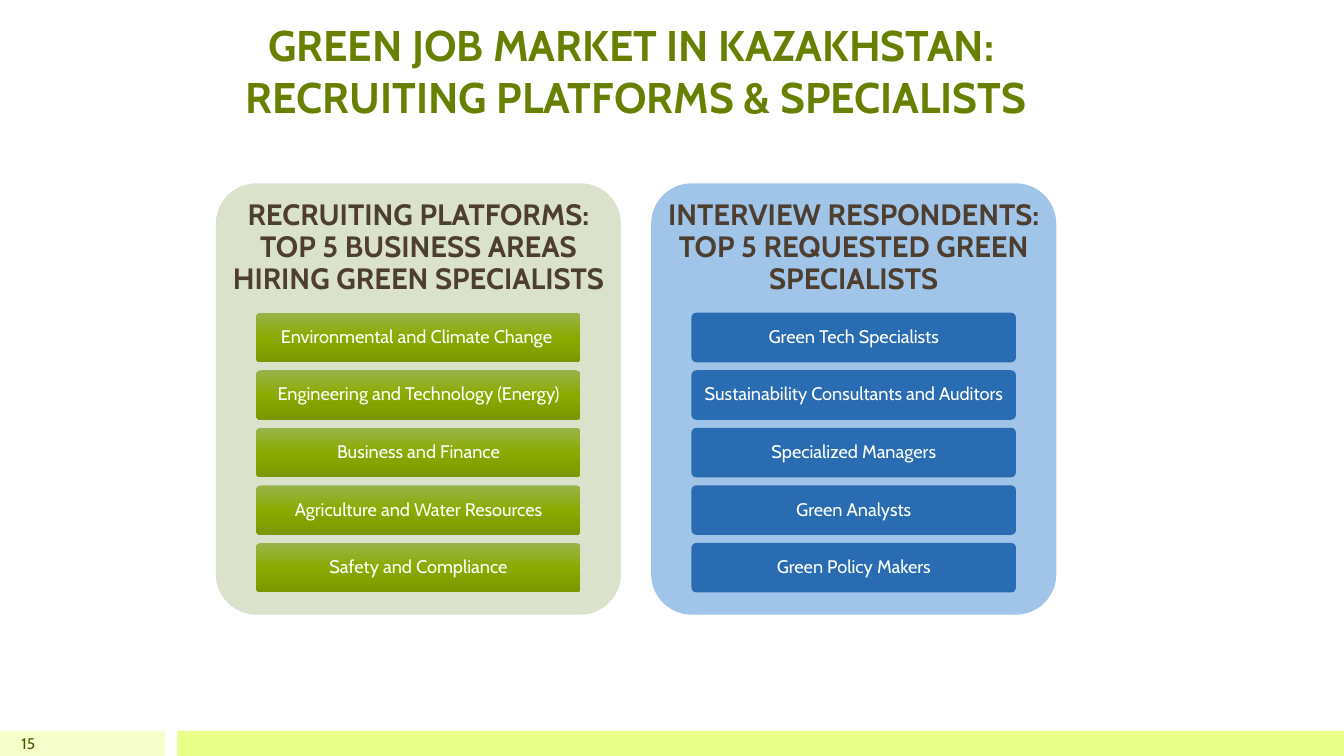
from copy import deepcopy
from dataclasses import dataclass

from pptx import Presentation
from pptx.dml.color import RGBColor
from pptx.enum.shapes import MSO_SHAPE
from pptx.enum.text import MSO_ANCHOR, PP_ALIGN
from pptx.util import Cm, Pt


@dataclass(frozen=True)
class Theme:
    font: str = "Cabin"
    title_size: float = 30.6
    heading_size: float = 21
    tile_size: float = 13
    number_size: float = 11
    title: str = "688000"
    heading: str = "4D3E2F"
    tile_text: str = "FFFFFF"
    number: str = "455500"
    footer_light: str = "F6FFCC"
    footer: str = "E9FF88"
    green_panel: str = "DAE2CC"
    green_tile: tuple = ("98B44B", "8BAA00", "7C9700")
    blue_panel: str = "A1C4E9"
    blue_tile: tuple = ("2A6CB2",)


class SlideBuilder:
    def __init__(self, slide, theme):
        self.slide = slide
        self.theme = theme

    def set_text(self, shape, text, size, color, bold=False, align=PP_ALIGN.CENTER,
                 anchor=MSO_ANCHOR.MIDDLE, spacing=1.0, insets=(0.25, 0.13)):
        """Put one formatted paragraph into a shape; insets are in cm."""
        frame = shape.text_frame
        frame.text = text
        paragraph = frame.paragraphs[0]
        side, end = (Cm(inset) for inset in insets)
        formats = (
            (frame, {"word_wrap": True, "vertical_anchor": anchor,
                     "margin_left": side, "margin_right": side,
                     "margin_top": end, "margin_bottom": end}),
            (paragraph, {"alignment": align, "line_spacing": spacing}),
        )
        fonts = tuple((run.font, {"name": self.theme.font, "size": Pt(size), "bold": bold})
                      for run in paragraph.runs)
        for target, values in formats + fonts:
            for name, value in values.items():
                setattr(target, name, value)
        for run in paragraph.runs:
            run.font.color.rgb = RGBColor.from_string(color)

    def title(self, text, left, top, width, height):
        shape = self.slide.shapes.title
        box = {"left": left, "top": top, "width": width, "height": height}
        for name, value in box.items():
            setattr(shape, name, Cm(value))
        self.set_text(shape, text, self.theme.title_size, self.theme.title,
                      bold=True, anchor=MSO_ANCHOR.BOTTOM)

    def text(self, text, left, top, width, height, size, color, **options):
        shape = self.slide.shapes.add_textbox(Cm(left), Cm(top), Cm(width), Cm(height))
        self.set_text(shape, text, size, color, **options)

    def block(self, left, top, width, height, colors, rounding=None):
        """Add a rectangle; several colours make a vertical gradient."""
        kind = MSO_SHAPE.RECTANGLE if rounding is None else MSO_SHAPE.ROUNDED_RECTANGLE
        shape = self.slide.shapes.add_shape(kind, Cm(left), Cm(top), Cm(width), Cm(height))
        shape.shadow.inherit = False
        shape.line.fill.background()
        if rounding is not None:
            shape.adjustments[0] = rounding
        if len(colors) == 1:
            shape.fill.solid()
            shape.fill.fore_color.rgb = RGBColor.from_string(colors[0])
        else:
            self.gradient(shape, colors)
        return shape

    def gradient(self, shape, colors):
        shape.fill.gradient()
        shape.fill.gradient_angle = 270
        stop_list = shape._element.spPr.find(".//{*}gsLst")
        for _ in colors[2:]:
            stop_list.append(deepcopy(stop_list[-1]))
        for index, (stop, color) in enumerate(zip(shape.fill.gradient_stops, colors)):
            stop.position = index / (len(colors) - 1)
            stop.color.rgb = RGBColor.from_string(color)

    def panel(self, left, heading, items, panel_color, tile_colors):
        top, width, height = 4.62, 10.21, 10.87
        heading_height = 3.26
        tile_width, tile_height, gap = 8.18, 1.25, 0.2
        self.block(left, top, width, height, (panel_color,), rounding=0.1)
        self.text(heading, left, top, width, heading_height, self.theme.heading_size,
                  self.theme.heading, bold=True, spacing=0.9, insets=(0.23, 0.23))
        for row, item in enumerate(items):
            tile = self.block(left + (width - tile_width) / 2,
                              top + heading_height + row * (tile_height + gap),
                              tile_width, tile_height, tile_colors, rounding=0.1)
            self.set_text(tile, item, self.theme.tile_size, self.theme.tile_text,
                          spacing=0.9, insets=(0.1, 0.08))


def main():
    theme = Theme()
    presentation = Presentation()
    presentation.slide_width, presentation.slide_height = Cm(33.87), Cm(19.05)
    slide = presentation.slides.add_slide(presentation.slide_layouts[5])
    builder = SlideBuilder(slide, theme)

    # Footer bars and slide number
    footer_top, footer_height = 18.42, 0.63
    builder.block(0, footer_top, 4.16, footer_height, (theme.footer_light,))
    builder.block(4.47, footer_top, 29.4, footer_height, (theme.footer,))
    builder.text("15", 0, footer_top, 1.14, footer_height, theme.number_size,
                 theme.number, align=PP_ALIGN.RIGHT)

    # Title
    builder.title("GREEN JOB MARKET IN KAZAKHSTAN: \vRECRUITING PLATFORMS & SPECIALISTS",
                  1.14, 0.84, 29.77, 2.36)

    # Two panels with their top five lists
    builder.panel(
        5.44, "RECRUITING PLATFORMS: TOP 5 BUSINESS AREAS HIRING GREEN SPECIALISTS",
        ("Environmental and Climate Change ", "Engineering and Technology (Energy)",
         "Business and Finance", "Agriculture and Water Resources",
         "Safety and Compliance"),
        theme.green_panel, theme.green_tile)
    builder.panel(
        16.41, "INTERVIEW RESPONDENTS: TOP 5 REQUESTED GREEN SPECIALISTS",
        ("Green Tech Specialists", "Sustainability Consultants and Auditors",
         "Specialized Managers", "Green Analysts", "Green Policy Makers"),
        theme.blue_panel, theme.blue_tile)

    presentation.save("out.pptx")


if __name__ == "__main__":
    main()
